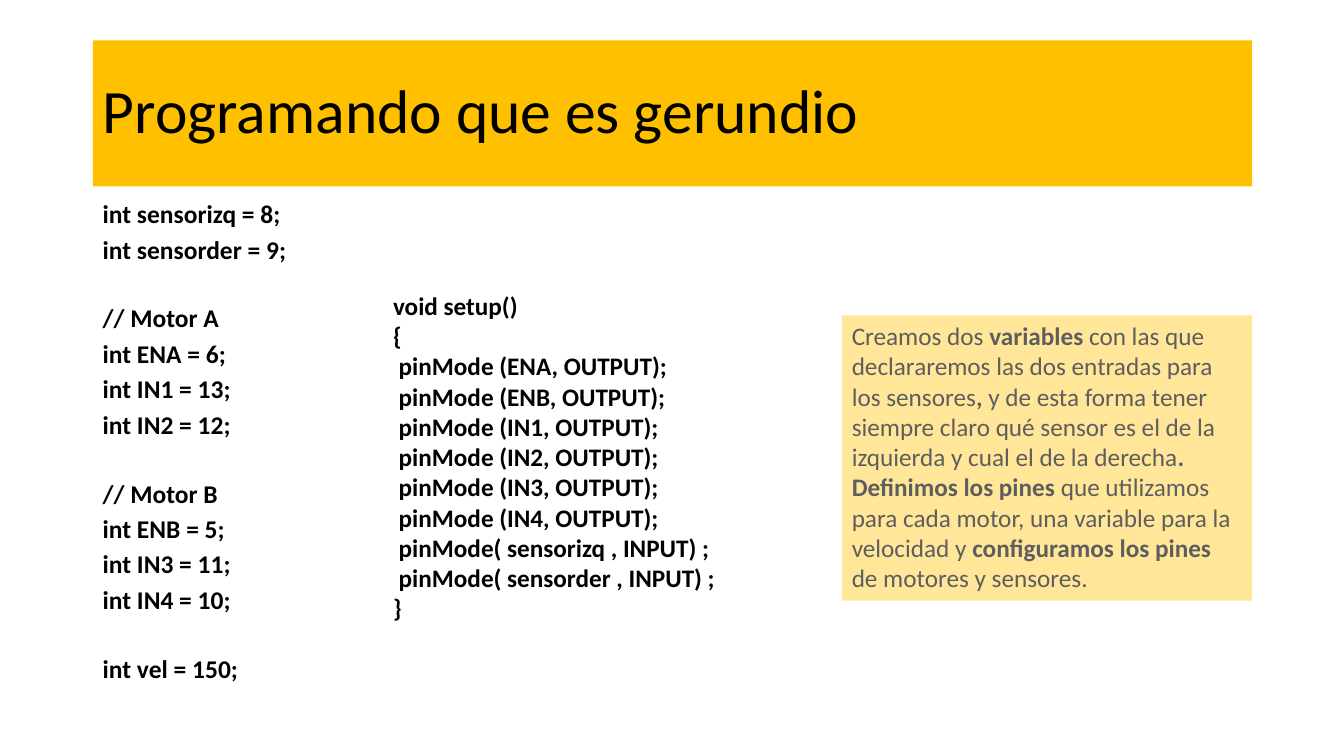
from dataclasses import dataclass

from pptx import Presentation
from pptx import util as u
from pptx.dml import color
from pptx.enum import shapes, text

PX = u.Inches(1) // 100


@dataclass(frozen=True)
class Theme:
    font: str = "Calibri"
    banner: str = "FFC000"
    note: str = "FFE699"
    ink: str = "000000"
    note_ink: str = "5F5E5E"
    title_size: float = 44
    pins_size: float = 18.2
    body_size: float = 18


def rgb(value):
    return color.RGBColor.from_string(value)


def write(p, content, *, font, size, ink, bold=False):
    r = p.add_run()
    r.text = content
    r.font.name = font
    r.font.size = u.Pt(size)
    r.font.bold = bold
    r.font.color.rgb = rgb(ink)


class Deck:
    def __init__(self, theme, width, height):
        self.theme = theme
        self.prs = Presentation()
        self.prs.slide_width = width * PX
        self.prs.slide_height = height * PX
        self.s = None

    def add_slide(self):
        self.s = self.prs.slides.add_slide(self.prs.slide_layouts[5])

    def frame(self, sp, anchor):
        tf = sp.text_frame
        tf.word_wrap = True
        tf.auto_size = text.MSO_AUTO_SIZE.NONE
        tf.vertical_anchor = anchor
        return tf

    def paragraphs(self, tf, count):
        for i in range(count):
            p = tf.paragraphs[0] if i == 0 else tf.add_paragraph()
            p.alignment = text.PP_ALIGN.LEFT
            yield p

    def title(self, content, x, y, w, h):
        sp = self.s.shapes.title
        sp.left, sp.top, sp.width, sp.height = (v * PX for v in (x, y, w, h))
        sp.fill.solid()
        sp.fill.fore_color.rgb = rgb(self.theme.banner)
        tf = self.frame(sp, text.MSO_ANCHOR.MIDDLE)
        for p in self.paragraphs(tf, 1):
            p.line_spacing = 0.9
            write(p, content, font=self.theme.font,
                  size=self.theme.title_size, ink=self.theme.ink)

    def code(self, groups, x, y, w, h, *, size, line=1.0, before=0, gap=0):
        sp = self.s.shapes.add_textbox(x * PX, y * PX, w * PX, h * PX)
        tf = self.frame(sp, text.MSO_ANCHOR.TOP)
        rows = [(content, gap if g and not i else before)
                for g, group in enumerate(groups)
                for i, content in enumerate(group)]
        for p, (content, space) in zip(self.paragraphs(tf, len(rows)), rows):
            p.line_spacing = line
            p.space_before = u.Pt(space)
            write(p, content, font=self.theme.font, size=size,
                  ink=self.theme.ink, bold=True)

    def note(self, paragraphs, x, y, w, h):
        sp = self.s.shapes.add_shape(shapes.MSO_SHAPE.RECTANGLE,
                                     x * PX, y * PX, w * PX, h * PX)
        sp.shadow.inherit = False
        sp.fill.solid()
        sp.fill.fore_color.rgb = rgb(self.theme.note)
        sp.line.fill.background()
        tf = self.frame(sp, text.MSO_ANCHOR.TOP)
        for p, parts in zip(self.paragraphs(tf, len(paragraphs)), paragraphs):
            for content, bold in parts:
                write(p, content, font=self.theme.font, bold=bold,
                      size=self.theme.body_size, ink=self.theme.note_ink)


def motor(name, enable, enable_pin, inputs):
    return [f"// Motor {name}", f"int {enable} = {enable_pin};",
            *(f"int {pin} = {number};" for pin, number in inputs)]


def main():
    theme = Theme()
    deck = Deck(theme, 1333, 750)
    deck.add_slide()
    deck.title("Programando que es gerundio", 92, 40, 1150, 145)

    declarations = [
        ["int sensorizq = 8;", "int sensorder = 9;"],
        motor("A", "ENA", 6, [("IN1", 13), ("IN2", 12)]),
        motor("B", "ENB", 5, [("IN3", 11), ("IN4", 10)]),
        ["int vel = 150;"],
    ]
    deck.code(declarations, 92, 200, 272, 510,
              size=theme.pins_size, line=0.7, before=10, gap=34)

    outputs = ["ENA", "ENB", "IN1", "IN2", "IN3", "IN4"]
    sensors = ["sensorizq", "sensorder"]
    setup = ["void setup()", "{",
             *(f" pinMode ({pin}, OUTPUT);" for pin in outputs),
             *(f" pinMode( {pin} , INPUT) ;" for pin in sensors),
             "}"]
    deck.code([setup], 380, 283, 439, 343, size=theme.body_size)

    deck.note([
        [("Creamos dos ", False), ("variables ", True),
         ("con las que declararemos las dos entradas para los sensores", False),
         (", ", True),
         ("y de esta forma tener siempre claro qué sensor es el de la "
          "izquierda y cual el de la derecha", False),
         (".", True)],
        [("Definimos los pines ", True),
         ("que utilizamos para cada motor, una variable para la "
          "velocidad y ", False),
         ("configuramos los pines ", True),
         ("de motores y sensores.", False)],
    ], 835, 313, 407, 283)

    deck.prs.save("out.pptx")


if __name__ == "__main__":
    main()
